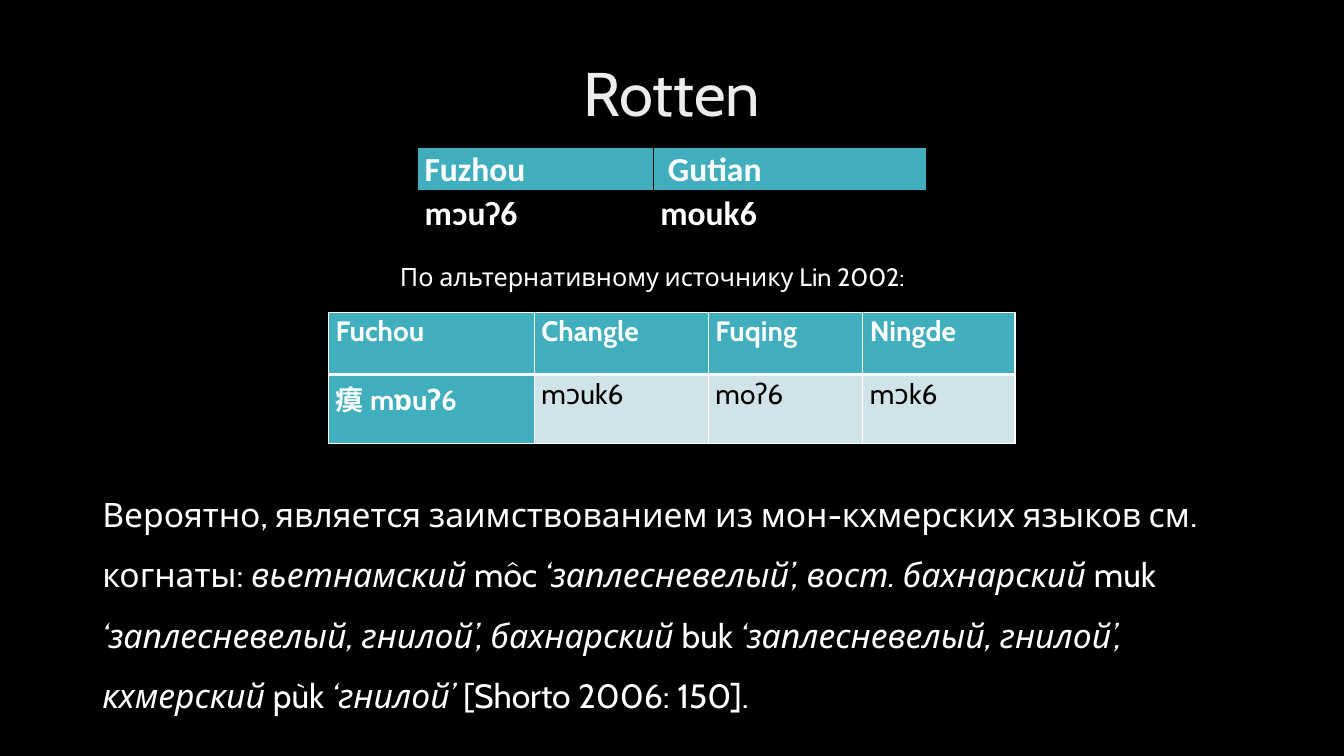
from lxml import etree
from pptx import Presentation
from pptx.dml.color import RGBColor
from pptx.enum.text import MSO_ANCHOR, PP_ALIGN
from pptx.oxml.ns import qn
from pptx.util import Cm, Pt

BLACK = RGBColor(0x00, 0x00, 0x00)
WHITE = RGBColor(0xFF, 0xFF, 0xFF)
PALE = RGBColor(0xED, 0xED, 0xED)
TEAL = RGBColor(0x41, 0xAE, 0xBD)
MIST = RGBColor(0xCF, 0xE3, 0xE8)
CENTER = PP_ALIGN.CENTER
LEFT = PP_ALIGN.LEFT
MIDDLE = MSO_ANCHOR.MIDDLE
TOP = MSO_ANCHOR.TOP
SIDES = ("L", "R", "T", "B")

NOTE = (
    ("Вероятно, является заимствованием из мон-кхмерских языков см. когнаты: ", False),
    ("вьетнамский ", True),
    ("môc", False),
    (" ‘заплесневелый’, вост. бахнарский ", True),
    ("muk", False),
    (" ‘заплесневелый, гнилой’, бахнарский ", True),
    ("buk ", False),
    ("‘заплесневелый, гнилой’, кхмерский ", True),
    ("pùk", False),
    (" ‘гнилой’ ", True),
    ("[Shorto 2006: 150].", False),
)


def style(run, size, color=WHITE, face="Cabin", bold=False, italic=False):
    font = run.font
    font.size = Pt(size)
    font.name = face
    font.color.rgb = color
    font.bold = bold
    font.italic = italic


def add_text(slide, box, parts, size, color=WHITE, space=1.0, align=LEFT, anchor=TOP):
    frame = slide.shapes.add_textbox(*map(Cm, box)).text_frame
    frame.word_wrap = True
    frame.vertical_anchor = anchor
    para = frame.paragraphs[0]
    para.alignment = align
    para.line_spacing = space
    for text, italic in parts:
        run = para.add_run()
        run.text = text
        style(run, size, color, italic=italic)


def add_edge(cell, side, color, width):
    props = cell._tc.get_or_add_tcPr()
    line = etree.SubElement(props, qn("a:ln" + side), w=str(Pt(width)))
    fill = etree.SubElement(line, qn("a:solidFill"))
    etree.SubElement(fill, qn("a:srgbClr"), val=str(color))


def fill_cell(cell, text, size, face, color, bold, back, edges):
    cell.margin_left = cell.margin_right = Cm(0.18)
    cell.margin_top = cell.margin_bottom = 0
    for side, (tint, width) in zip(SIDES, edges):
        add_edge(cell, side, tint, width)
    if back is None:
        cell.fill.background()
    else:
        cell.fill.solid()
        cell.fill.fore_color.rgb = back
    para = cell.text_frame.paragraphs[0]
    para.text = text
    para.line_spacing = 1.07
    style(para.runs[0], size, color, face, bold)


def add_grid(slide, left, top, widths, heights):
    frame = slide.shapes.add_table(
        len(heights), len(widths), Cm(left), Cm(top), Cm(sum(widths)), Cm(sum(heights))
    )
    table = frame.table
    table.horz_banding = False
    for column, width in zip(table.columns, widths):
        column.width = Cm(width)
    for row, height in zip(table.rows, heights):
        row.height = Cm(height)
    return table


def add_main(slide):
    rows = (("Fuzhou", "\u00a0Gutian"), ("mᴐuʔ6", "mouk6"))
    table = add_grid(slide, 10.52, 3.71, (5.94, 6.88), (0.89, 1.35))
    edges = [(BLACK, 1)] * 4
    for r, (row, back) in enumerate(zip(rows, (TEAL, None))):
        for c, text in enumerate(row):
            fill_cell(table.cell(r, c), text, 24, "Calibri", WHITE, True, back, edges)


def add_other(slide):
    rows = (
        ("Fuchou", "Changle", "Fuqing", "Ningde"),
        ("瘼 mɒuʔ6", "mᴐuk6", "moʔ6", "mᴐk6"),
    )
    table = add_grid(slide, 8.28, 7.87, (5.18, 4.39, 3.89, 3.84), (1.57, 1.73))
    thin, thick = (WHITE, 1), (WHITE, 3)
    borders = ((thin, thin, thin, thick), (thin, thin, thick, thin))
    for r, (row, edges) in enumerate(zip(rows, borders)):
        for c, text in enumerate(row):
            head = r == 0 or c == 0
            color, back = (WHITE, TEAL) if head else (BLACK, MIST)
            fill_cell(table.cell(r, c), text, 20, "Cabin", color, head, back, edges)


def main():
    deck = Presentation()
    deck.slide_width = Cm(33.87)
    deck.slide_height = Cm(19.05)
    slide = deck.slides.add_slide(deck.slide_layouts[6])
    slide.background.fill.solid()
    slide.background.fill.fore_color.rgb = BLACK
    add_text(slide, (2.33, 1.01, 29.21, 2.85), [("Rotten", False)], 44, PALE, 0.9, CENTER, MIDDLE)
    add_main(slide)
    add_other(slide)
    add_text(slide, (2.33, 11.81, 28.63, 6.25), NOTE, 24, space=1.5)
    source = [("По альтернативному источнику Lin 2002:", False)]
    add_text(slide, (9.83, 6.45, 20.7, 1.02), source, 18)
    deck.save("out.pptx")


if __name__ == "__main__":
    main()
